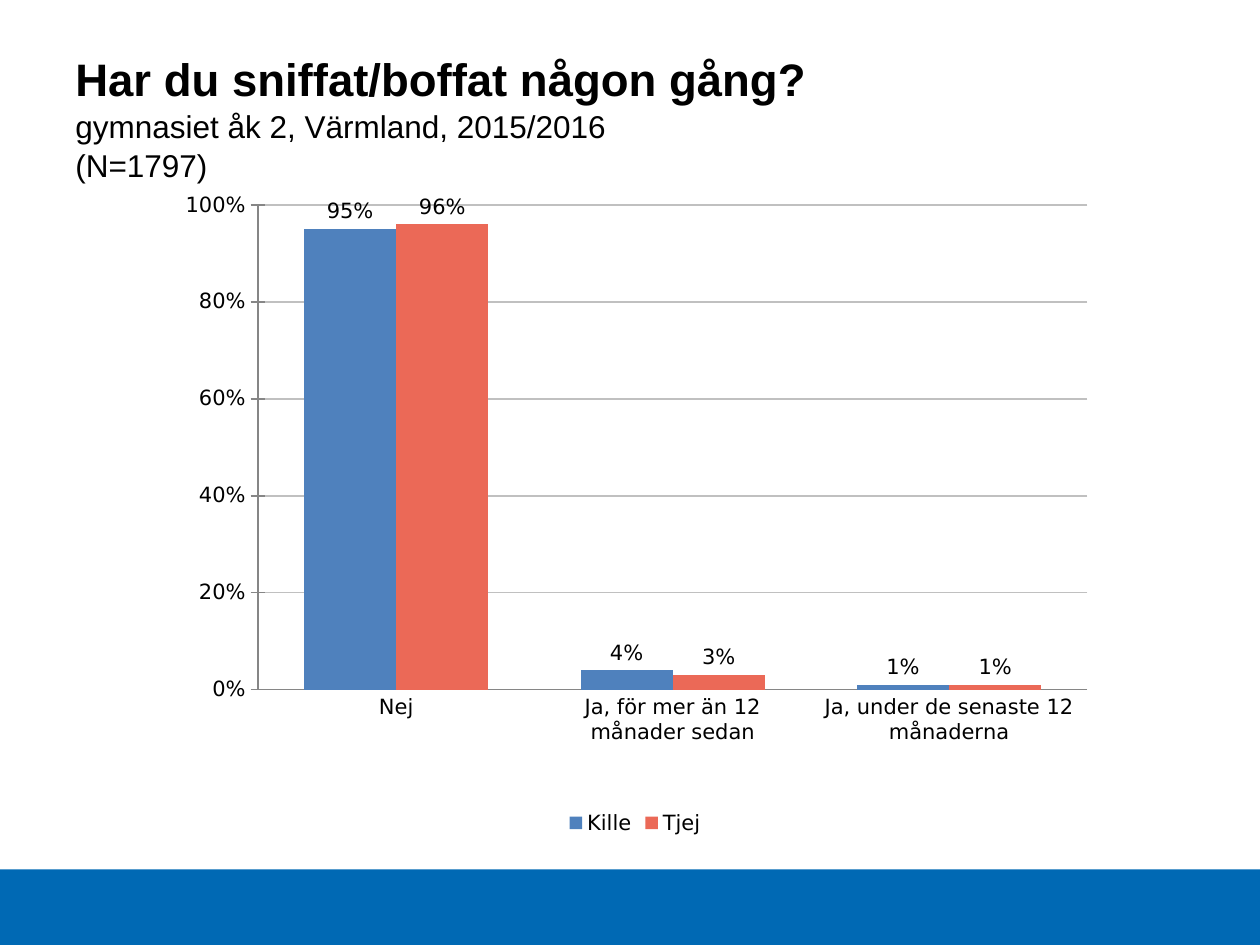
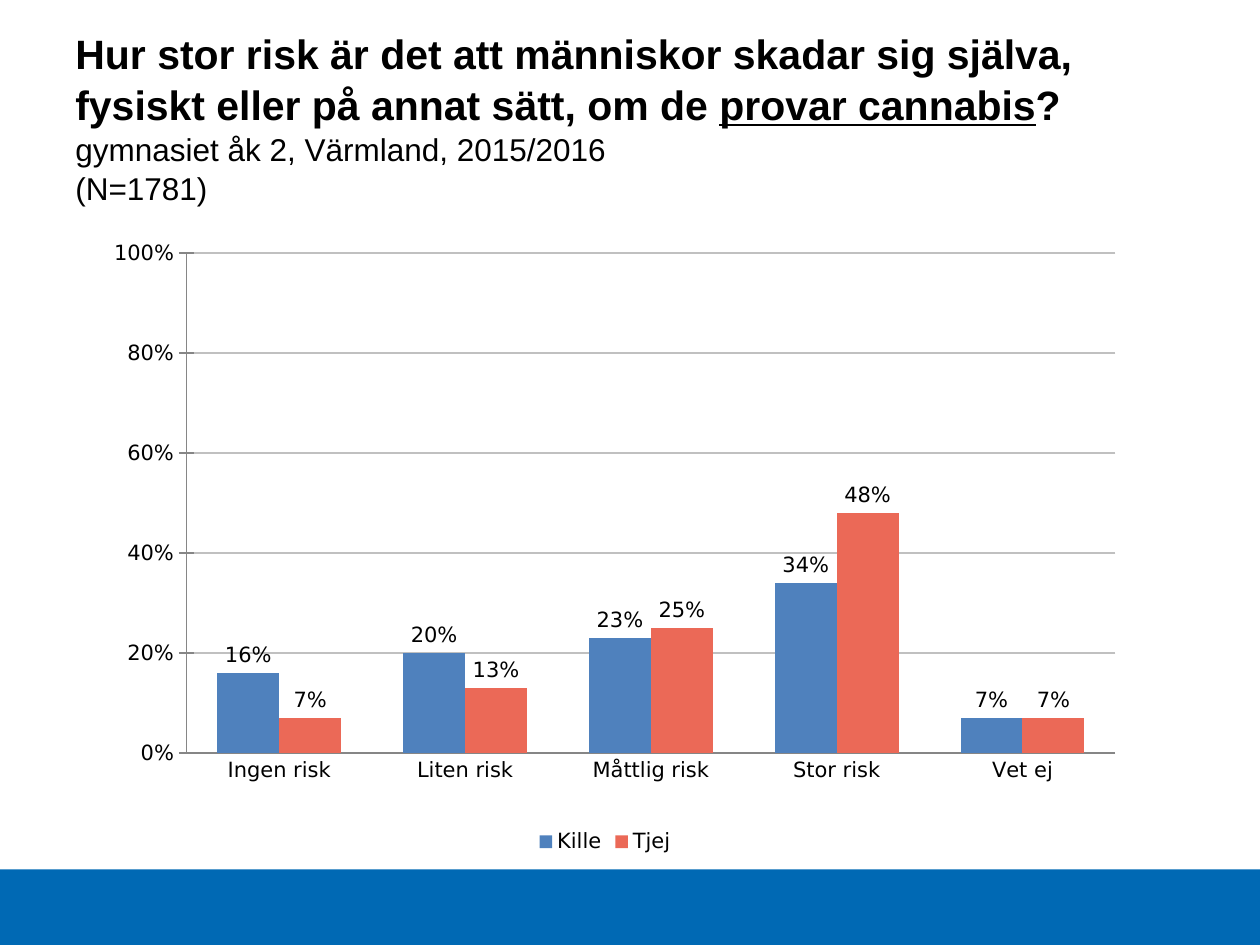
from pptx import Presentation
from pptx.chart.data import CategoryChartData as Data
from pptx.dml.color import RGBColor
from pptx.enum.chart import (XL_CHART_TYPE as Kind, XL_LABEL_POSITION as Spot,
                             XL_LEGEND_POSITION as Side, XL_TICK_MARK as Tick)
from pptx.enum.shapes import MSO_SHAPE as Shape
from pptx.enum.text import MSO_ANCHOR as Anchor
from pptx.oxml import parse_xml
from pptx.util import Inches, Pt

NS = "http://schemas.openxmlformats.org/drawingml/2006/chart"
BLUE, BLACK, GRID, AXIS = "0069B4", "000000", "C0C0C0", "868686"
GROUPS = {"Kille": "4F81BD", "Tjej": "EB6957"}
PLACE = "gymnasiet åk 2, Värmland, 2015/2016"


def color(code):
    return RGBColor.from_string(code)


class Deck:
    """Holds the survey style and the current slide."""

    def __init__(self):
        self.prs = Presentation()
        self.prs.slide_width, self.prs.slide_height = Inches(10), Inches(7.5)
        self.slide = None

    def page(self):
        self.slide = self.prs.slides.add_slide(self.prs.slide_layouts[6])
        self.band()

    def band(self):
        band = self.slide.shapes.add_shape(
            Shape.RECTANGLE, Inches(0), Inches(6.9), Inches(10), Inches(0.6))
        band.shadow.inherit = False
        band.fill.solid()
        band.fill.fore_color.rgb = color(BLUE)
        band.line.fill.background()

    def font(self, font, size, name="DejaVu Sans", bold=False):
        font.size, font.name, font.bold = Pt(size), name, bold
        font.color.rgb = color(BLACK)

    def title(self, parts, size, count):
        """Write the question, with every second part underlined."""
        box = self.slide.shapes.add_textbox(
            Inches(0.5), Inches(0.3), Inches(8.66), Inches(1.25))
        frame = box.text_frame
        frame.word_wrap = True
        frame.vertical_anchor = Anchor.MIDDLE
        frame.text = f"\n{PLACE}\n(N={count})"
        head, *rest = frame.paragraphs
        for i, part in enumerate(parts):
            run = head.add_run()
            run.text = part
            self.font(run.font, size, "Arial", True)
            run.font.underline = i % 2 == 1
        for para in rest:
            self.font(para.runs[0].font, 18, "Arial")
        for para in frame.paragraphs:
            para.line_spacing = 1.04

    def chart(self, area, inner, cats, rows):
        data = Data(number_format="0%")
        data.categories = cats
        for name, vals in zip(GROUPS, rows):
            data.add_series(name, vals)
        chart = self.slide.shapes.add_chart(
            Kind.COLUMN_CLUSTERED, *map(Inches, area), data).chart
        self.font(chart.font, 12)
        chart.has_title = False
        chart.has_legend = True
        chart.legend.position = Side.BOTTOM
        chart.legend.include_in_layout = False
        self.font(chart.legend.font, 12)
        self.bars(chart.plots[0])
        self.axes(chart)
        self.layout(chart, inner)

    def bars(self, plot):
        plot.gap_width, plot.overlap = 100, 0
        plot.vary_by_categories = False
        for bar, code in zip(plot.series, GROUPS.values()):
            bar.format.fill.solid()
            bar.format.fill.fore_color.rgb = color(code)
            tags = bar.data_labels
            tags.show_value = True
            tags.number_format, tags.number_format_is_linked = "0%", False
            tags.position = Spot.OUTSIDE_END
            self.font(tags.font, 12)

    def axes(self, chart):
        cat, val = chart.category_axis, chart.value_axis
        for axis, tick in ((cat, Tick.NONE), (val, Tick.CROSS)):
            axis.major_tick_mark, axis.minor_tick_mark = tick, Tick.NONE
            self.font(axis.tick_labels.font, 12)
            self.line(axis.format.line, AXIS)
        val.minimum_scale, val.maximum_scale, val.major_unit = 0, 1, 0.2
        val.tick_labels.number_format = "0%"
        val.tick_labels.number_format_is_linked = False
        val.has_major_gridlines = True
        self.line(val.major_gridlines.format.line, GRID)

    def line(self, line, code):
        line.width = Pt(1)
        line.color.rgb = color(code)

    def layout(self, chart, inner):
        """Fix the inner plot area as shares of the chart."""
        plot = chart.element.find(f".//{{{NS}}}plotArea")
        old = plot.find(f"{{{NS}}}layout")
        if old is not None:
            plot.remove(old)
        modes = "".join(f'<c:{k}Mode val="edge"/>' for k in "xy")
        sizes = "".join(f'<c:{k} val="{v}"/>' for k, v in zip("xywh", inner))
        plot.insert(0, parse_xml(
            f'<c:layout xmlns:c="{NS}"><c:manualLayout>'
            f'<c:layoutTarget val="inner"/>{modes}{sizes}'
            '</c:manualLayout></c:layout>'))


def main():
    deck = Deck()
    deck.page()
    deck.title(["Har du sniffat/boffat någon gång?"], 26, 1797)
    deck.chart((1.3, 1.47, 7.48, 5.2), (0.1, 0.03, 0.88, 0.74),
               ["Nej", "Ja, för mer än 12 månader sedan",
                "Ja, under de senaste 12 månaderna"],
               [(0.95, 0.04, 0.01), (0.96, 0.03, 0.01)])

    deck.page()
    deck.title(["Hur stor risk är det att människor skadar sig själva, "
                "fysiskt eller på annat sätt, om de ",
                "provar cannabis", "?"], 23.4, 1781)
    deck.chart((0.75, 1.86, 8.11, 4.96), (0.09, 0.03, 0.91, 0.8),
               ["Ingen risk", "Liten risk", "Måttlig risk",
                "Stor risk", "Vet ej"],
               [(0.16, 0.2, 0.23, 0.34, 0.07),
                (0.07, 0.13, 0.25, 0.48, 0.07)])
    deck.prs.save("out.pptx")


if __name__ == "__main__":
    main()
